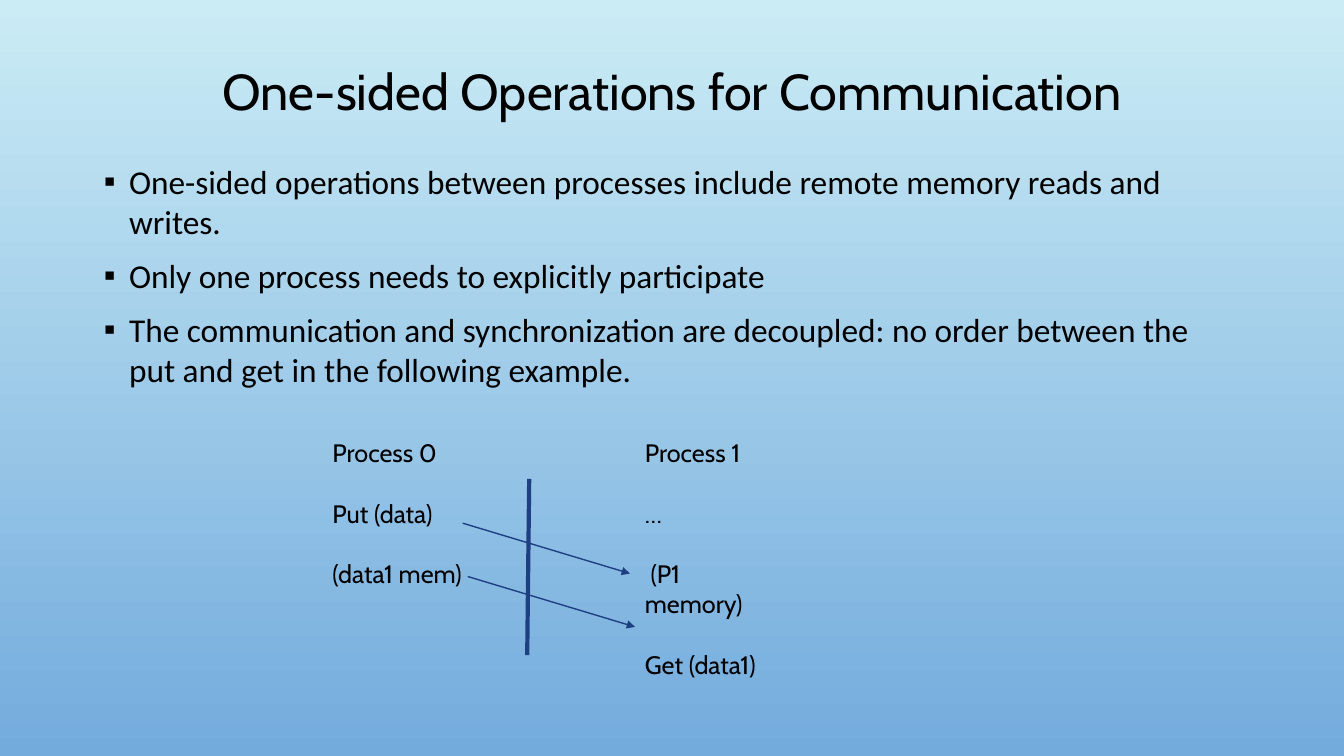
from dataclasses import dataclass

from lxml.etree import SubElement
from pptx import Presentation
from pptx.dml.color import RGBColor
from pptx.enum.shapes import MSO_CONNECTOR
from pptx.enum.text import MSO_ANCHOR, MSO_AUTO_SIZE, PP_ALIGN
from pptx.oxml.ns import qn
from pptx.util import Pt


@dataclass(frozen=True)
class Theme:
    sky_top: str = "CBECF5"
    sky_bottom: str = "73ABDD"
    ink: str = "000000"
    line: str = "1F3F83"
    heading_face: str = "Cabin"
    body_face: str = "Calibri"
    title_size: float = 36
    body_size: float = 23.8
    label_size: float = 18
    body_gap: float = 10
    label_gap: float = 21.6


THEME = Theme()


def style_font(paragraph, face, size):
    paragraph.font.name = face
    paragraph.font.size = Pt(size)
    paragraph.font.color.rgb = RGBColor.from_string(THEME.ink)


def place(shape, left, top, width, height):
    shape.left, shape.top = Pt(left), Pt(top)
    shape.width, shape.height = Pt(width), Pt(height)


def paint_background(slide):
    fill = slide.background.fill
    fill.gradient()
    fill.gradient_angle = 270
    for stop, position, color in zip(
        fill.gradient_stops, (0, 1), (THEME.sky_top, THEME.sky_bottom)
    ):
        stop.position = position
        stop.color.rgb = RGBColor.from_string(color)


def write_title(slide, text):
    title = slide.shapes.title
    place(title, 72, 23, 816, 88.5)
    frame = title.text_frame
    frame.text = text
    frame.auto_size = MSO_AUTO_SIZE.NONE
    frame.vertical_anchor = MSO_ANCHOR.MIDDLE
    heading = frame.paragraphs[0]
    heading.alignment = PP_ALIGN.CENTER
    heading.line_spacing = 0.9
    style_font(heading, THEME.heading_face, THEME.title_size)


def add_bullet(paragraph):
    properties = paragraph._p.get_or_add_pPr()
    properties.set("marL", str(Pt(18)))
    properties.set("indent", str(-Pt(18)))
    bullet_color = SubElement(properties, qn("a:buClr"))
    SubElement(bullet_color, qn("a:srgbClr"), val=THEME.ink)
    SubElement(properties, qn("a:buChar"), char="▪")


def write_paragraphs(frame, lines, face, size, gap, bulleted=False):
    frame.text = "\n".join(lines)
    for index, paragraph in enumerate(frame.paragraphs):
        if bulleted:
            add_bullet(paragraph)
        paragraph.space_before = Pt(gap if index else 0)
        style_font(paragraph, face, size)


def write_points(slide, points):
    body = slide.placeholders[1]
    place(body, 67, 111.6, 816, 181.4)
    body.text_frame.auto_size = MSO_AUTO_SIZE.NONE
    body.text_frame.vertical_anchor = MSO_ANCHOR.TOP
    write_paragraphs(body.text_frame, points, THEME.body_face,
                     THEME.body_size, THEME.body_gap, bulleted=True)


def add_process(slide, left, width, height, steps):
    process = slide.shapes.add_textbox(Pt(left), Pt(308.9), Pt(width), Pt(height))
    process.text_frame.word_wrap = True
    write_paragraphs(process.text_frame, steps, THEME.heading_face,
                     THEME.label_size, THEME.label_gap)


def add_line(slide, start, end, weight, arrow=False):
    connector = slide.shapes.add_connector(
        MSO_CONNECTOR.STRAIGHT, *(Pt(value) for value in (*start, *end))
    )
    connector.line.color.rgb = RGBColor.from_string(THEME.line)
    connector.line.width = Pt(weight)
    if arrow:
        SubElement(connector.line._get_or_add_ln(), qn("a:tailEnd"), type="triangle")
    SubElement(connector._element.spPr, qn("a:effectLst"))


def main():
    deck = Presentation()
    deck.slide_width, deck.slide_height = Pt(960), Pt(540)
    slide = deck.slides.add_slide(deck.slide_layouts[1])
    paint_background(slide)
    write_title(slide, "One-sided Operations for Communication")
    write_points(slide, [
        "One-sided operations between processes include remote memory reads and writes.",
        "Only one process needs to explicitly participate",
        "The communication and synchronization are decoupled: no order between "
        "the put and get in the following example.",
    ])
    add_process(slide, 230.4, 107.3, 116.6,
                ["Process 0", "Put (data)", "(data1 mem)"])
    add_process(slide, 453.6, 110.9, 159.8,
                ["Process 1", "…", " (P1 memory)", "Get (data1)"])
    add_line(slide, (378, 342), (376.6, 468), 3)
    for left, top in ((330.5, 373.7), (334.1, 411.8)):
        add_line(slide, (left, top), (left + 119.5, top + 36), 1, arrow=True)
    deck.save("out.pptx")


if __name__ == "__main__":
    main()
